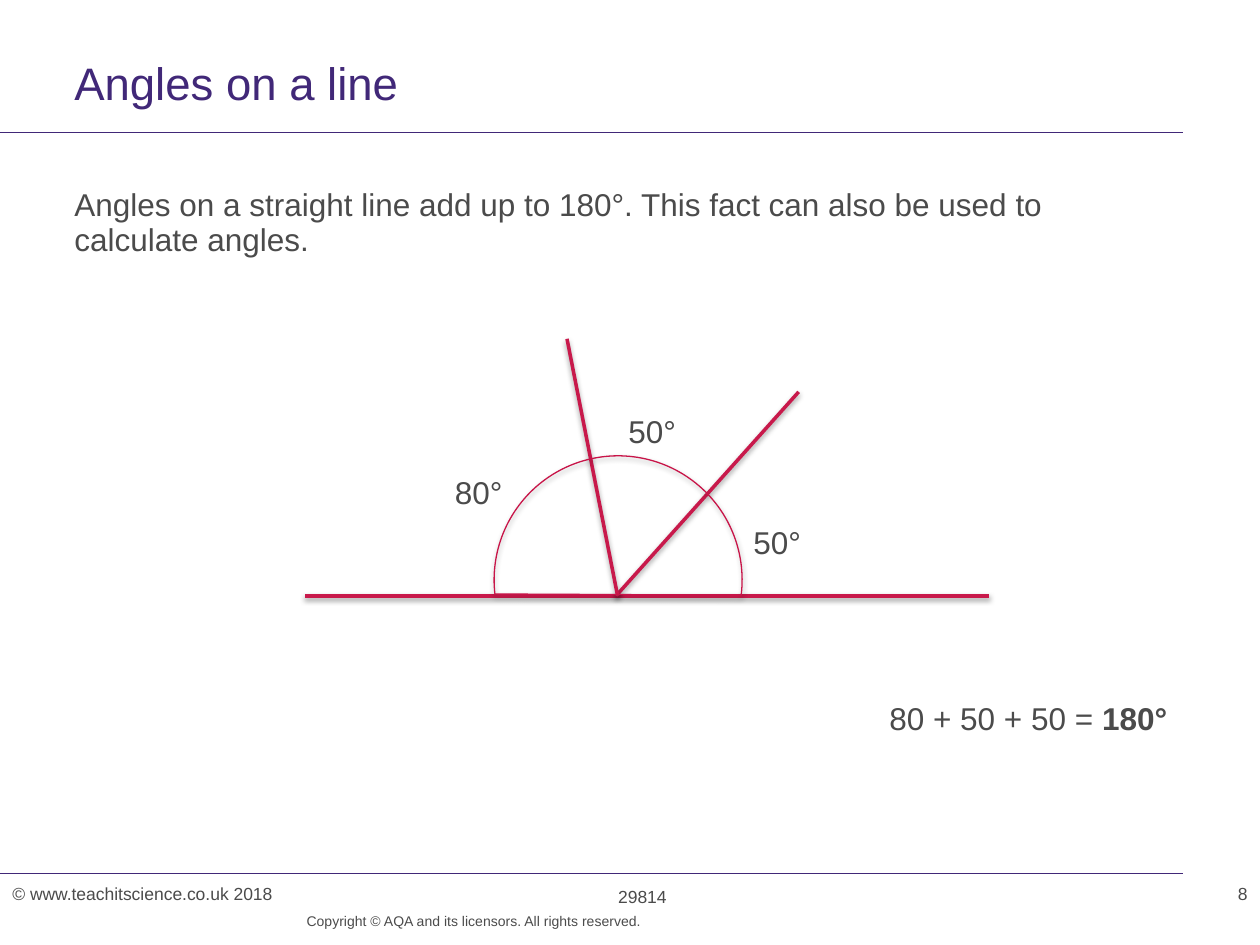
from dataclasses import dataclass

from lxml import etree
from pptx import Presentation
from pptx.dml.color import RGBColor
from pptx.enum import shapes as sh, text as tx
from pptx.oxml import ns
from pptx.util import Cm, Pt


@dataclass(frozen=True)
class Theme:
    """Colours, font and type sizes of the slide."""
    font: str = "Arial"
    head: str = "412878"
    ink: str = "4B4B4B"
    ray: str = "C8194B"
    arc: str = "C81448"
    big: int = 26
    base: int = 18
    foot: int = 10
    tiny: int = 8


THEME = Theme()
LEFT, CENTRE, RIGHT = tx.PP_ALIGN.LEFT, tx.PP_ALIGN.CENTER, tx.PP_ALIGN.RIGHT


def write(slide, box, words, size, tint=THEME.ink, align=LEFT, lead=None,
          pad=(0.25, 0.13, 0.25, 0.13), wrap=True, bold=""):
    """Place a text box, with an optional bold ending."""
    frame = slide.shapes.add_textbox(*map(Cm, box)).text_frame
    frame.word_wrap = wrap
    (frame.margin_left, frame.margin_top,
     frame.margin_right, frame.margin_bottom) = map(Cm, pad)
    para = frame.paragraphs[0]
    para.text = words
    para.alignment = align
    if lead:
        para.line_spacing = Pt(lead)
    if bold:
        end = para.add_run()
        end.text = bold
        end.font.bold = True
    for run in para.runs:
        run.font.name = THEME.font
        run.font.size = Pt(size)
        run.font.color.rgb = RGBColor.from_string(tint)


def shade(shape, alpha=0, dist=0):
    """Set a soft downward shadow, or none when alpha is zero."""
    props = shape._element.spPr
    for old in props.findall(ns.qn("a:effectLst")):
        props.remove(old)
    group = etree.SubElement(props, ns.qn("a:effectLst"))
    if alpha:
        cast = etree.SubElement(
            group, ns.qn("a:outerShdw"), blurRad=str(Pt(3.1)),
            dist=str(Pt(dist)), dir="5400000", rotWithShape="0")
        tone = etree.SubElement(cast, ns.qn("a:srgbClr"), val="000000")
        etree.SubElement(tone, ns.qn("a:alpha"), val=str(alpha * 1000))


def draw(slide, start, end, tint, width, alpha=0):
    """Draw a straight line between two points."""
    line = slide.shapes.add_connector(
        sh.MSO_CONNECTOR.STRAIGHT, *map(Cm, (*start, *end)))
    line.line.color.rgb = RGBColor.from_string(tint)
    line.line.width = Pt(width)
    shade(line, alpha, 1.6)


def header(slide, x, y, w):
    """Place the title, its rule and the statement."""
    draw(slide, (0, y + 1.45), (x + w, y + 1.45), THEME.head, 0.6)
    pad = (0, 0, 0.25, 0)
    write(slide, (x, y, w, 1.19), "Angles on a line", THEME.big,
          THEME.head, lead=28, pad=pad)
    write(slide, (x, y + 2.56, w, 2.31),
          "Angles on a straight line add up to 180°. "
          "This fact can also be used to calculate angles.",
          THEME.base, lead=20, pad=pad)


def angles(slide, x, y, w, h):
    """Draw the base line, two rays, the arc and the angle labels."""
    foot = y + h
    for start, end in (((x, foot), (x + w, foot)),
                       ((x + 6.27, foot), (x + 9.95, y + 1.07)),
                       ((x + 6.3, foot), (x + 5.28, y))):
        draw(slide, start, end, THEME.ray, 2, 38)
    arc = slide.shapes.add_shape(
        sh.MSO_SHAPE.CHORD, *map(Cm, (x + 3.81, y + 2.36, 5, 5)))
    arc.rotation = 97.1
    arc.adjustments[0], arc.adjustments[1] = 45.8, 162
    arc.fill.background()
    arc.line.color.rgb = RGBColor.from_string(THEME.arc)
    arc.line.width = Pt(0.75)
    shade(arc, 35, 1.8)
    for words, dx, dy in (("80°", 2.77, 2.57), ("50°", 6.27, 1.35),
                          ("50°", 8.79, 3.58)):
        write(slide, (x + dx, y + dy, 1.47, 1.02), words, THEME.base,
              wrap=False)


def footer(slide, y, w):
    """Place the bottom rule, the three footer fields and the copyright."""
    draw(slide, (0, y), (23.85, y), THEME.head, 0.6)
    span = 9.7
    for words, x, dy, align in (
            ("© www.teachitscience.co.uk 2018", 0, 0.08, LEFT),
            ("29814", 8.1, 0.13, CENTRE),
            ("8", w - span, 0.08, RIGHT)):
        write(slide, (x, y + dy, span, 0.69), words, THEME.foot, align=align)
    write(slide, (5.49, y + 0.79, 7.44, 0.66),
          "Copyright © AQA and its licensors. All rights reserved.",
          THEME.tiny, align=RIGHT, lead=10, pad=(0, 0, 0, 0))


def main():
    """Build and save the slide."""
    deck = Presentation()
    deck.slide_width, deck.slide_height = Cm(25.4), Cm(19.05)
    slide = deck.slides.add_slide(deck.slide_layouts[6])
    header(slide, 1.5, 1.22, 22.35)
    footer(slide, 17.6, 25.4)
    angles(slide, 6.15, 6.83, 13.79, 5.18)
    write(slide, (17.68, 13.97, 6.17, 1.02), "80 + 50 + 50 = ", THEME.base,
          wrap=False, bold="180°")
    deck.save("out.pptx")


if __name__ == "__main__":
    main()
